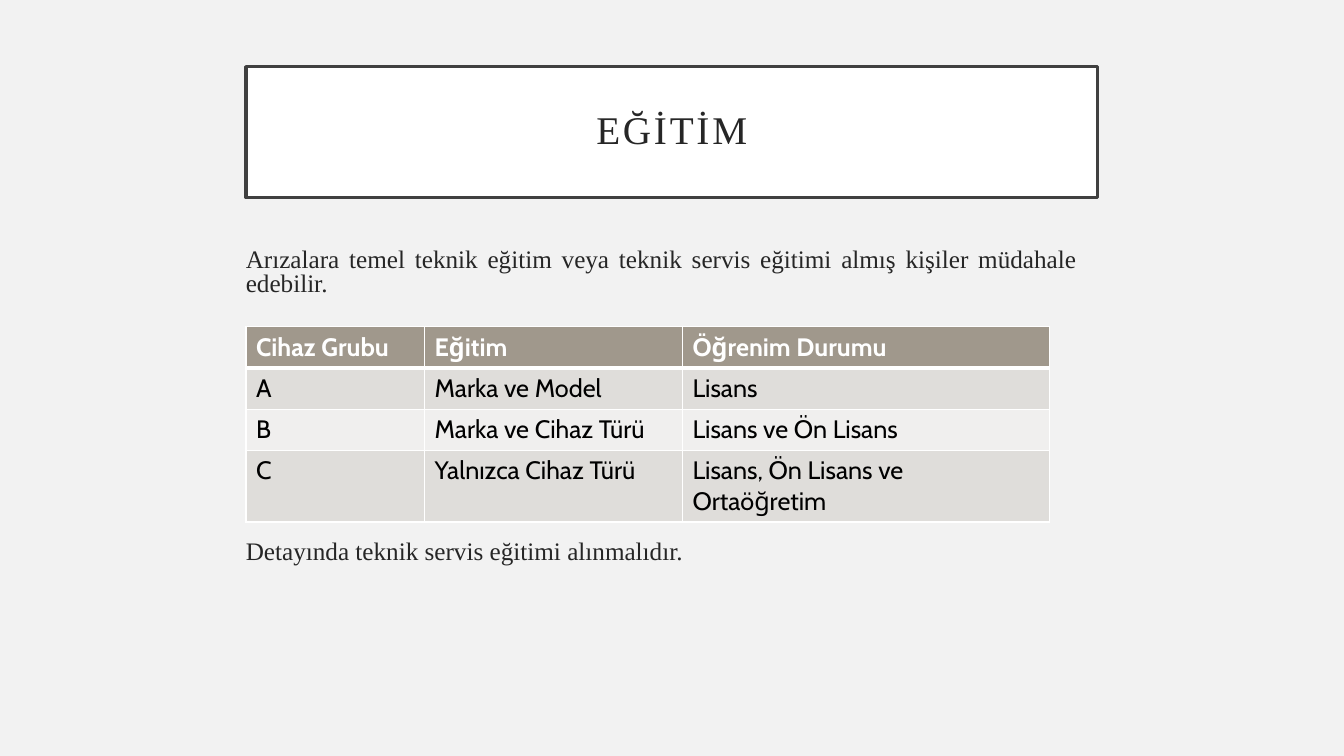
import pptx
import pptx.dml.color
import pptx.enum.text
import pptx.oxml
import pptx.oxml.ns
import pptx.util
from dataclasses import dataclass

Cm, Pt = pptx.util.Cm, pptx.util.Pt
ALIGN = pptx.enum.text.PP_ALIGN
ANCHOR = pptx.enum.text.MSO_ANCHOR

HEADING = "EĞİTİM"
STATEMENTS = [
    ("Arızalara temel teknik eğitim veya teknik servis eğitimi almış kişiler müdahale edebilir.", 0),
    ("Detayında teknik servis eğitimi alınmalıdır.", 174.5),
]
TRAINING = [
    ("Cihaz Grubu", "Eğitim", "Öğrenim Durumu"),
    ("A", "Marka ve Model", "Lisans"),
    ("B", "Marka ve Cihaz Türü", "Lisans ve Ön Lisans"),
    ("C", "Yalnızca Cihaz Türü", "Lisans, Ön Lisans ve Ortaöğretim"),
]
COLUMN_WIDTHS = [4.5, 6.5, 9.25]
ROW_HEIGHTS = [1.04, 1.04, 1.04, 1.78]


@dataclass(frozen=True)
class Theme:
    background: str = "F2F2F2"
    white: str = "FFFFFF"
    frame: str = "404040"
    ink: str = "262626"
    cell_ink: str = "000000"
    header: str = "A0988C"
    bands: tuple = ("F0EFEE", "DFDDDA")
    serif: str = "Times New Roman"
    sans: str = "Cabin"
    heading_size: int = 28
    text_size: int = 18


THEME = Theme()


def apply(target, formats):
    for attribute, value in formats.items():
        setattr(target, attribute, value)


def paint(fill, color):
    fill.solid()
    fill.fore_color.rgb = pptx.dml.color.RGBColor.from_string(color)


def style(font, name, size, color, bold=False):
    apply(font, {"name": name, "size": Pt(size), "bold": bold})
    font.color.rgb = pptx.dml.color.RGBColor.from_string(color)


def place(shape, left, top, width, height):
    apply(shape, {"left": Cm(left), "top": Cm(top), "width": Cm(width), "height": Cm(height)})


def add_border(cell, side, points):
    cell._tc.get_or_add_tcPr().append(pptx.oxml.parse_xml(
        f'<a:ln{side} {pptx.oxml.ns.nsdecls("a")} w="{Pt(points)}"><a:solidFill>'
        f'<a:srgbClr val="{THEME.white}"/></a:solidFill></a:ln{side}>'))


def add_heading(slide):
    heading = slide.shapes.title
    place(heading, 6.2, 1.68, 21.46, 3.3)
    paint(heading.fill, THEME.white)
    paint(heading.line.fill, THEME.frame)
    heading.line.width = Pt(2.5)
    frame = heading.text_frame
    apply(frame, {"vertical_anchor": ANCHOR.MIDDLE, "word_wrap": True,
                  "auto_size": pptx.enum.text.MSO_AUTO_SIZE.NONE,
                  **{f"margin_{side}": Cm(0.51) for side in ("left", "top", "right", "bottom")}})
    paragraph = frame.paragraphs[0]
    apply(paragraph, {"alignment": ALIGN.CENTER, "line_spacing": 0.9})
    run = paragraph.add_run()
    run.text = HEADING
    style(run.font, THEME.serif, THEME.heading_size, THEME.ink)
    run._r.get_or_add_rPr().set("spc", "200")


def add_statements(slide):
    body = slide.placeholders[1]
    place(body, 5.94, 5.61, 21.46, 8.61)
    frame = body.text_frame
    apply(frame, {"vertical_anchor": ANCHOR.TOP, "margin_top": Cm(0.66), "word_wrap": True,
                  "auto_size": pptx.enum.text.MSO_AUTO_SIZE.NONE})
    for index, (statement, gap) in enumerate(STATEMENTS):
        paragraph = frame.add_paragraph() if index else frame.paragraphs[0]
        apply(paragraph, {"alignment": ALIGN.JUSTIFY, "line_spacing": 0.8, "space_before": Pt(gap)})
        properties = paragraph._p.get_or_add_pPr()
        properties.set("marL", "0")
        properties.set("indent", "0")
        properties.append(pptx.oxml.parse_xml(f'<a:buNone {pptx.oxml.ns.nsdecls("a")}/>'))
        run = paragraph.add_run()
        run.text = statement
        style(run.font, THEME.serif, THEME.text_size, THEME.ink)


def add_training(slide):
    table = slide.shapes.add_table(
        len(TRAINING), len(COLUMN_WIDTHS), Cm(6.2), Cm(8.23),
        Cm(sum(COLUMN_WIDTHS)), Cm(sum(ROW_HEIGHTS))).table
    for column, width in zip(table.columns, COLUMN_WIDTHS):
        column.width = Cm(width)
    for index, (row, height, entries) in enumerate(zip(table.rows, ROW_HEIGHTS, TRAINING)):
        row.height = Cm(height)
        is_header = index == 0
        borders = {"L": 1, "R": 1, "T": 3 if index == 1 else 1, "B": 3 if is_header else 1}
        for cell, entry in zip(row.cells, entries):
            for side, points in borders.items():
                add_border(cell, side, points)
            paint(cell.fill, THEME.header if is_header else THEME.bands[index % 2])
            run = cell.text_frame.paragraphs[0].add_run()
            run.text = entry
            style(run.font, THEME.sans, THEME.text_size,
                  THEME.white if is_header else THEME.cell_ink, is_header)


def main():
    """Build the training requirements slide."""
    presentation = pptx.Presentation()
    apply(presentation, {"slide_width": Cm(33.87), "slide_height": Cm(19.05)})
    slide = presentation.slides.add_slide(presentation.slide_layouts[1])
    paint(slide.background.fill, THEME.background)
    add_heading(slide)
    add_statements(slide)
    add_training(slide)
    presentation.save("out.pptx")


if __name__ == "__main__":
    main()
